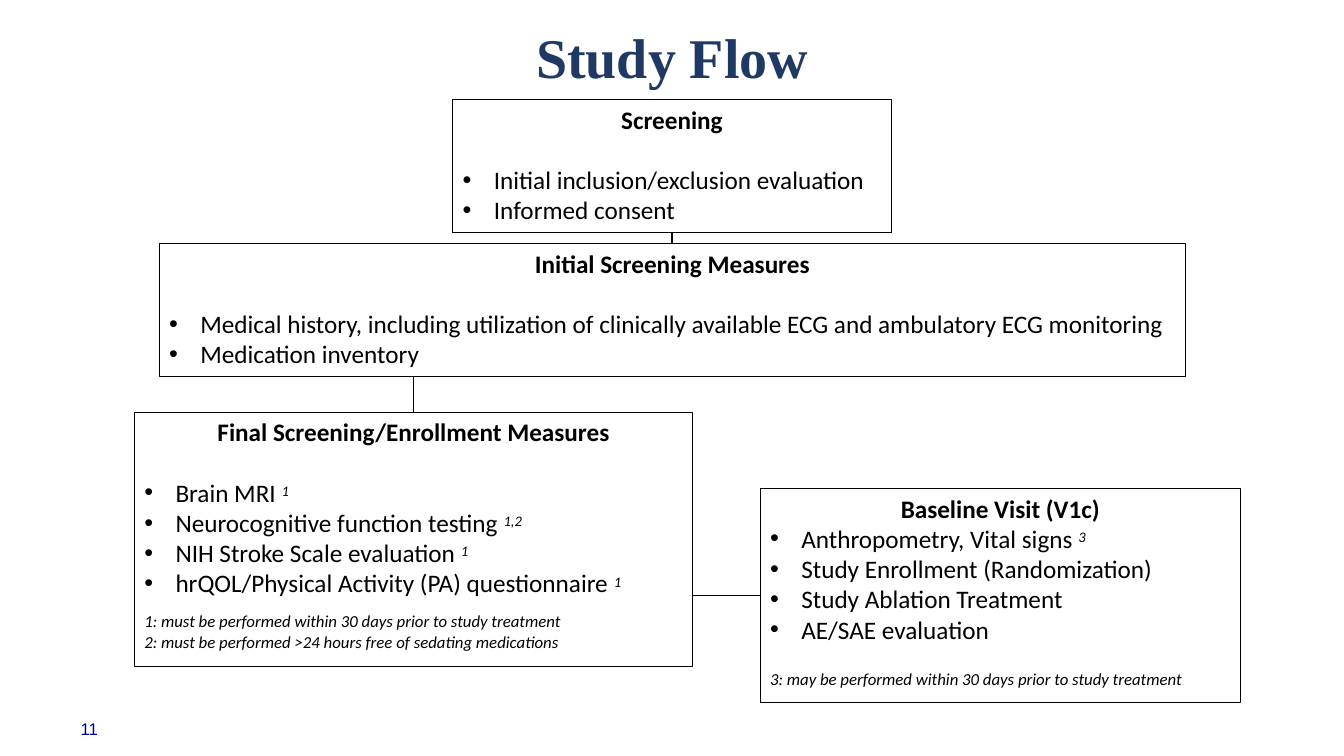
from dataclasses import dataclass

from lxml.etree import SubElement
from pptx import Presentation
from pptx.dml.color import RGBColor
from pptx.enum.shapes import MSO_CONNECTOR, MSO_SHAPE
from pptx.enum.text import MSO_ANCHOR, PP_ALIGN
from pptx.oxml.ns import qn
from pptx.util import Inches, Pt


@dataclass(frozen=True)
class Theme:
    ink: RGBColor = RGBColor(0x00, 0x00, 0x00)
    title: RGBColor = RGBColor(0x20, 0x38, 0x64)
    number: RGBColor = RGBColor(0x00, 0x00, 0x99)
    title_font: str = "Times New Roman"
    body_font: str = "Calibri"
    number_font: str = "Arial"
    title_size: int = 40
    body_size: int = 18
    note_size: int = 12
    box_line: float = 0.75
    link_line: float = 1


@dataclass(frozen=True)
class Area:
    column: float
    row: float
    columns: float
    rows: float

    @property
    def right(self):
        return self.column + self.columns

    @property
    def bottom(self):
        return self.row + self.rows

    @property
    def middle_column(self):
        return self.column + self.columns / 2

    @property
    def middle_row(self):
        return self.row + self.rows / 2


class FlowSlide:
    COLUMNS, ROWS = 160, 90
    HANGING = Inches(0.31)

    def __init__(self, presentation, theme):
        self.theme = theme
        self.slide = presentation.slides.add_slide(presentation.slide_layouts[6])
        self.column = presentation.slide_width / self.COLUMNS
        self.row = presentation.slide_height / self.ROWS

    def place(self, area):
        return (round(area.column * self.column), round(area.row * self.row),
                round(area.columns * self.column), round(area.rows * self.row))

    def style(self, paragraph, font, size, color, bold=False, italic=False):
        paragraph.font.name = font
        paragraph.font.size = Pt(size)
        paragraph.font.color.rgb = color
        paragraph.font.bold = bold
        paragraph.font.italic = italic

    def label(self, area, text, font, size, color, bold=False, align=PP_ALIGN.LEFT):
        frame = self.slide.shapes.add_textbox(*self.place(area)).text_frame
        frame.word_wrap = True
        frame.margin_left = frame.margin_right = 0
        frame.margin_top = frame.margin_bottom = 0
        paragraph = frame.paragraphs[0]
        paragraph.text = text
        paragraph.alignment = align
        self.style(paragraph, font, size, color, bold)

    def bullet(self, frame, text, mark, gap):
        paragraph = frame.add_paragraph()
        paragraph.alignment = PP_ALIGN.LEFT
        properties = paragraph._p.get_or_add_pPr()
        properties.set("marL", str(self.HANGING))
        properties.set("indent", str(-self.HANGING))
        SubElement(properties, qn("a:buFont"), typeface="Arial")
        SubElement(properties, qn("a:buChar"), char="•")
        paragraph.space_before = Pt(gap)
        self.style(paragraph, self.theme.body_font, self.theme.body_size, self.theme.ink)
        paragraph.add_run().text = text
        if mark:
            superscript = paragraph.add_run()
            superscript.text = mark
            superscript.font.italic = True
            superscript._r.get_or_add_rPr().set("baseline", "23000")

    def note(self, frame, text, gap):
        paragraph = frame.add_paragraph()
        paragraph.text = text
        paragraph.alignment = PP_ALIGN.LEFT
        paragraph.space_before = Pt(gap)
        self.style(paragraph, self.theme.body_font, self.theme.note_size,
                   self.theme.ink, italic=True)

    def step(self, area, heading, bullets, notes=(), bullet_gap=21.6, note_gap=9):
        shape = self.slide.shapes.add_shape(MSO_SHAPE.RECTANGLE, *self.place(area))
        shape.shadow.inherit = False
        shape.fill.background()
        shape.line.color.rgb = self.theme.ink
        shape.line.width = Pt(self.theme.box_line)
        frame = shape.text_frame
        frame.word_wrap = True
        frame.vertical_anchor = MSO_ANCHOR.TOP
        frame.margin_left = frame.margin_right = Inches(0.1)
        frame.margin_top = frame.margin_bottom = Inches(0.04)
        title = frame.paragraphs[0]
        title.text = heading
        title.alignment = PP_ALIGN.CENTER
        self.style(title, self.theme.body_font, self.theme.body_size, self.theme.ink, bold=True)
        for index, (text, mark) in enumerate(bullets):
            self.bullet(frame, text, mark, 0 if index else bullet_gap)
        for index, text in enumerate(notes):
            self.note(frame, text, 0.5 if index else note_gap)

    def link(self, start_column, start_row, end_column, end_row):
        connector = self.slide.shapes.add_connector(
            MSO_CONNECTOR.STRAIGHT,
            round(start_column * self.column), round(start_row * self.row),
            round(end_column * self.column), round(end_row * self.row))
        connector.line.color.rgb = self.theme.ink
        connector.line.width = Pt(self.theme.link_line)
        SubElement(connector._element.spPr, qn("a:effectLst"))

    def link_down(self, upper, lower):
        column = min(upper, lower, key=lambda area: area.columns).middle_column
        self.link(column, upper.bottom, column, lower.row)

    def link_across(self, left, right):
        self.link(left.right, right.middle_row, right.column, right.middle_row)


def main():
    presentation = Presentation()
    presentation.slide_width = Inches(13.33)
    presentation.slide_height = Inches(7.5)
    theme = Theme()
    flow = FlowSlide(presentation, theme)

    screening = Area(53.9, 11.9, 52.2, 15.75)
    initial = Area(18.95, 29.05, 122.2, 15.75)
    final = Area(16, 49.1, 66.5, 30.25)
    baseline = Area(90.5, 58.2, 57.2, 25.4)

    flow.label(Area(23.4, 2.7, 113.2, 8), "Study Flow", theme.title_font,
               theme.title_size, theme.title, bold=True, align=PP_ALIGN.CENTER)
    flow.step(screening, "Screening", [
        ("Initial inclusion/exclusion evaluation", ""),
        ("Informed consent", "")])
    flow.step(initial, "Initial Screening Measures", [
        ("Medical history, including utilization of clinically available ECG "
         "and ambulatory ECG monitoring", ""),
        ("Medication inventory", "")])
    flow.step(final, "Final Screening/Enrollment Measures", [
        ("Brain MRI ", "1"),
        ("Neurocognitive function testing ", "1,2"),
        ("NIH Stroke Scale evaluation ", "1"),
        ("hrQOL/Physical Activity (PA) questionnaire ", "1")], [
        "1: must be performed within 30 days prior to study treatment",
        "2: must be performed >24 hours free of sedating medications"])
    flow.step(baseline, "Baseline Visit (V1c)", [
        ("Anthropometry, Vital signs ", "3"),
        ("Study Enrollment (Randomization)", ""),
        ("Study Ablation Treatment", ""),
        ("AE/SAE evaluation", "")],
        ["3: may be performed within 30 days prior to study treatment"],
        bullet_gap=0, note_gap=17.4)

    flow.link_down(screening, initial)
    flow.link_down(initial, final)
    flow.link_across(final, baseline)
    flow.label(Area(9.6, 85.6, 3.4, 2.5), "11", theme.number_font,
               theme.note_size, theme.number)
    presentation.save("out.pptx")


if __name__ == "__main__":
    main()
